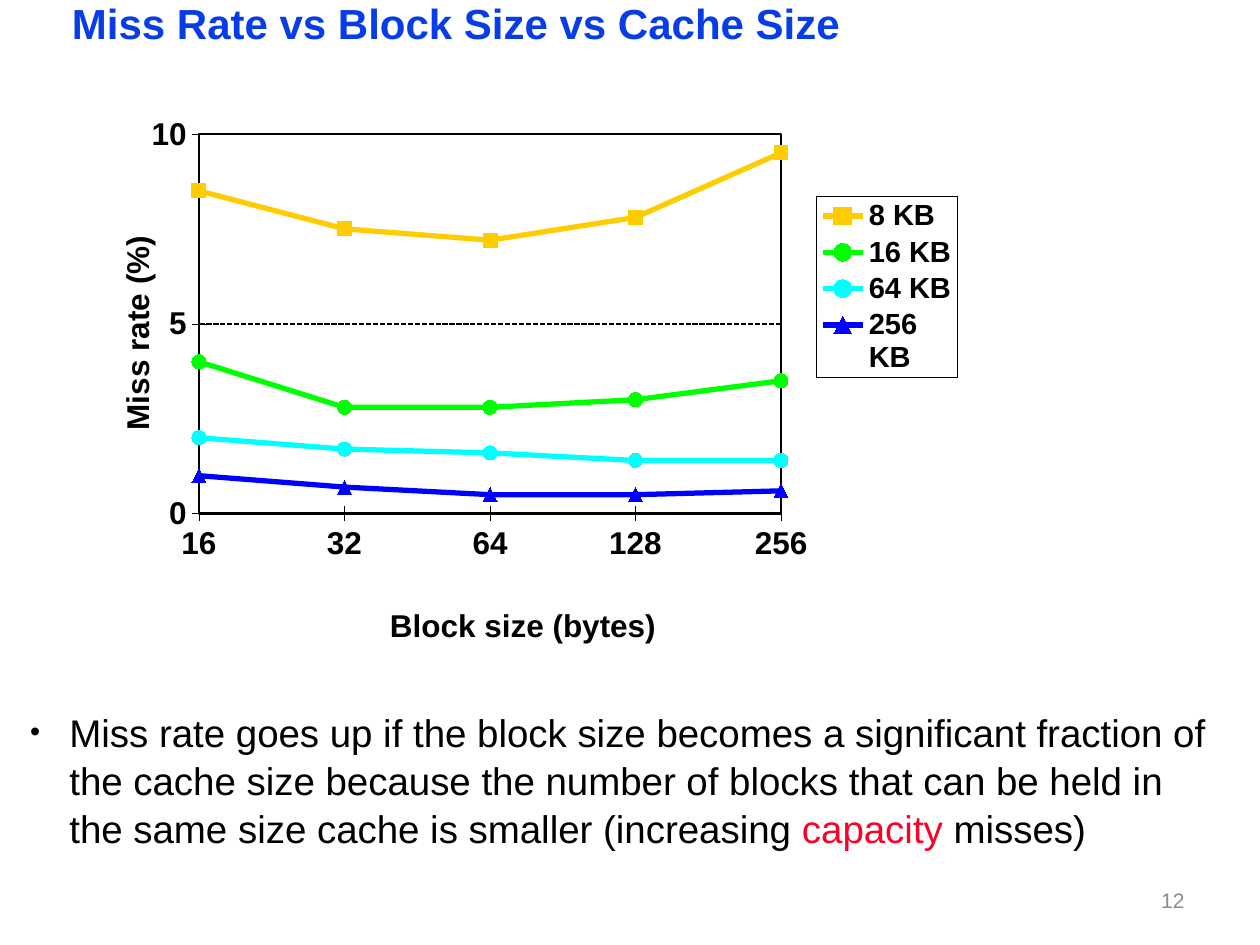
"""Build the slide on miss rate against block size and cache size."""
from dataclasses import dataclass

from pptx import Presentation
from pptx.chart.data import CategoryChartData
from pptx.dml.color import RGBColor
from pptx.enum.chart import XL_CHART_TYPE, XL_LEGEND_POSITION, XL_MARKER_STYLE, XL_TICK_MARK
from pptx.enum.dml import MSO_LINE
from pptx.enum.text import MSO_ANCHOR, MSO_AUTO_SIZE, PP_ALIGN
from pptx.oxml import parse_xml
from pptx.oxml.ns import nsdecls, qn
from pptx.oxml.xmlchemy import OxmlElement
from pptx.util import Cm, Pt

FONT = "Arial"
BLACK = "000000"
BLOCK_SIZES = ("16", "32", "64", "128", "256")


@dataclass(frozen=True)
class CacheSeries:
    """One cache size with its miss rates and look."""
    name: str
    rates: tuple[float, ...]
    color: str
    marker: XL_MARKER_STYLE


@dataclass(frozen=True)
class Span:
    """A stretch of text in one colour."""
    text: str
    color: str = BLACK


CACHES = (
    CacheSeries("8 KB", (8.5, 7.5, 7.2, 7.8, 9.5), "FFCC00", XL_MARKER_STYLE.SQUARE),
    CacheSeries("16 KB", (4, 2.8, 2.8, 3, 3.5), "00FF00", XL_MARKER_STYLE.CIRCLE),
    CacheSeries("64 KB", (2, 1.7, 1.6, 1.4, 1.4), "00FFFF", XL_MARKER_STYLE.CIRCLE),
    CacheSeries("256 KB", (1, 0.7, 0.5, 0.5, 0.6), "0000FF", XL_MARKER_STYLE.TRIANGLE),
)
CONCLUSION = (
    Span("Miss rate goes up if the block size becomes a significant fraction of the cache size "
         "because the number of blocks that can be held in the same size cache is smaller (increasing "),
    Span("capacity", "FC0128"),
    Span(" misses)"),
)


def rgb(color: str) -> RGBColor:
    """Turn a hex string into a colour."""
    return RGBColor.from_string(color)


def style_font(font, size: float, color: str = BLACK, bold: bool = False) -> None:
    """Set the face, size, colour and weight of a font."""
    font.name, font.size, font.bold = FONT, Pt(size), bold
    font.color.rgb = rgb(color)


def style_line(line, color: str, width: float) -> None:
    """Set the colour and width of a line."""
    line.color.rgb = rgb(color)
    line.width = Pt(width)


def set_insets(frame) -> None:
    """Give a text frame its narrow margins."""
    frame.margin_left = frame.margin_right = Cm(0.18)
    frame.margin_top = frame.margin_bottom = Cm(0.08)


def make_element(tag: str, **attributes: str):
    """Make an XML element with its attributes."""
    element = OxmlElement(tag)
    for name, value in attributes.items():
        element.set(name, value)
    return element


def set_layout(element, index: int, inner: bool = False, **fractions: float) -> None:
    """Place a chart part by fractions of the chart's size."""
    old = element.find(qn("c:layout"))
    if old is not None:
        element.remove(old)
    settings = {"layoutTarget": "inner"} if inner else {}
    settings.update(xMode="edge", yMode="edge", **fractions)
    children = "".join(f'<c:{tag} val="{value}"/>' for tag, value in settings.items())
    element.insert(index, parse_xml(
        f'<c:layout {nsdecls("c")}><c:manualLayout>{children}</c:manualLayout></c:layout>'))


def frame_properties(width: float):
    """Make the properties of an unfilled black frame."""
    return parse_xml(
        f'<c:spPr {nsdecls("c", "a")}><a:noFill/><a:ln w="{Pt(width)}"><a:solidFill>'
        f'<a:srgbClr val="{BLACK}"/></a:solidFill></a:ln></c:spPr>')


def style_axis(axis, title: str, x: float, y: float) -> None:
    """Format an axis and place its title."""
    axis.major_tick_mark = XL_TICK_MARK.CROSS
    axis.minor_tick_mark = XL_TICK_MARK.NONE
    style_font(axis.tick_labels.font, 18, bold=True)
    style_line(axis.format.line, BLACK, 0.25)
    frame = axis.axis_title.text_frame
    frame.text = title
    style_font(frame.paragraphs[0].runs[0].font, 18, bold=True)
    set_layout(axis.axis_title._element, 1, x=x, y=y)


def add_title(slide, text: str) -> None:
    """Fill and place the slide title."""
    title = slide.shapes.title
    title.left, title.top, title.width, title.height = Cm(1.27), Cm(0), Cm(22.66), Cm(1.17)
    frame = title.text_frame
    frame.text = text
    frame.auto_size = MSO_AUTO_SIZE.NONE
    frame.vertical_anchor = MSO_ANCHOR.TOP
    set_insets(frame)
    para = frame.paragraphs[0]
    para.alignment, para.line_spacing = PP_ALIGN.LEFT, 0.87
    style_font(para.runs[0].font, 24, "063DE8", True)


def add_miss_rate_chart(slide) -> None:
    """Draw the miss rate of each cache size as a line."""
    data = CategoryChartData()
    data.categories = BLOCK_SIZES
    for cache in CACHES:
        data.add_series(cache.name, cache.rates)
    chart = slide.shapes.add_chart(
        XL_CHART_TYPE.LINE_MARKERS, Cm(1.7), Cm(1.9), Cm(17.78), Cm(11.43), data).chart
    style_font(chart.font, 18, bold=True)
    chart.has_title = False

    style_axis(chart.category_axis, "Block size (bytes)", 0.34, 0.89)
    rates = chart.value_axis
    style_axis(rates, "Miss rate (%)", 0.03, 0.24)
    body = rates.axis_title.text_frame._txBody.bodyPr
    body.set("rot", "-5400000")
    body.set("vert", "horz")
    rates.minimum_scale, rates.maximum_scale, rates.major_unit = 0, 10, 5
    rates.tick_labels.number_format = "0"
    rates.tick_labels.number_format_is_linked = False
    style_line(rates.major_gridlines.format.line, BLACK, 1)
    rates.major_gridlines.format.line.dash_style = MSO_LINE.SQUARE_DOT
    rates._element.find(qn("c:majorUnit")).addprevious(make_element("c:crossBetween", val="midCat"))

    for cache, series in zip(CACHES, chart.plots[0].series):
        series.smooth = False
        style_line(series.format.line, cache.color, 3)
        marker = series.marker
        marker.style, marker.size = cache.marker, 8
        marker.format.fill.solid()
        marker.format.fill.fore_color.rgb = rgb(cache.color)
        style_line(marker.format.line, cache.color, 0.75)

    chart.has_legend = True
    legend = chart.legend
    legend.position, legend.include_in_layout = XL_LEGEND_POSITION.RIGHT, False
    style_font(legend.font, 16.6, bold=True)
    set_layout(legend._element, 1, x=0.83, y=0.18, w=0.16, h=0.32)
    legend._element.find(qn("c:txPr")).addprevious(frame_properties(0.25))
    plot_area = chart._chartSpace.chart.plotArea
    set_layout(plot_area, 0, True, x=0.13, y=0.07, w=0.66, h=0.67)
    plot_area.append(frame_properties(1.5))


def add_conclusion(slide) -> None:
    """Write the bulleted conclusion below the chart."""
    box = slide.shapes.add_textbox(Cm(0.43), Cm(14.17), Cm(24.33), Cm(3.91))
    frame = box.text_frame
    frame.word_wrap = True
    set_insets(frame)
    para = frame.paragraphs[0]
    para.line_spacing = 1.04
    for span in CONCLUSION:
        run = para.add_run()
        run.text = span.text
        style_font(run.font, 22, span.color)
    properties = para._p.get_or_add_pPr()
    properties.set("marL", str(Cm(0.79)))
    properties.set("indent", str(-Cm(0.79)))
    properties.append(make_element("a:buSzPct", val="75000"))
    properties.append(make_element("a:buFont", typeface=FONT))
    properties.append(make_element("a:buChar", char="•"))


def add_page_number(slide, number: str) -> None:
    """Write the page number at the lower right."""
    box = slide.shapes.add_textbox(Cm(18.2), Cm(17.65), Cm(5.93), Cm(1.01))
    frame = box.text_frame
    frame.text = number
    frame.word_wrap = True
    frame.vertical_anchor = MSO_ANCHOR.MIDDLE
    frame.paragraphs[0].alignment = PP_ALIGN.RIGHT
    style_font(frame.paragraphs[0].runs[0].font, 12, "8C8C8C")


def main() -> None:
    """Build and save the deck."""
    deck = Presentation()
    deck.slide_width, deck.slide_height = Cm(25.4), Cm(19.05)
    page = deck.slides.add_slide(deck.slide_layouts[5])
    add_title(page, "Miss Rate vs Block Size vs Cache Size")
    add_miss_rate_chart(page)
    add_conclusion(page)
    add_page_number(page, "12")
    deck.save("out.pptx")


if __name__ == "__main__":
    main()
